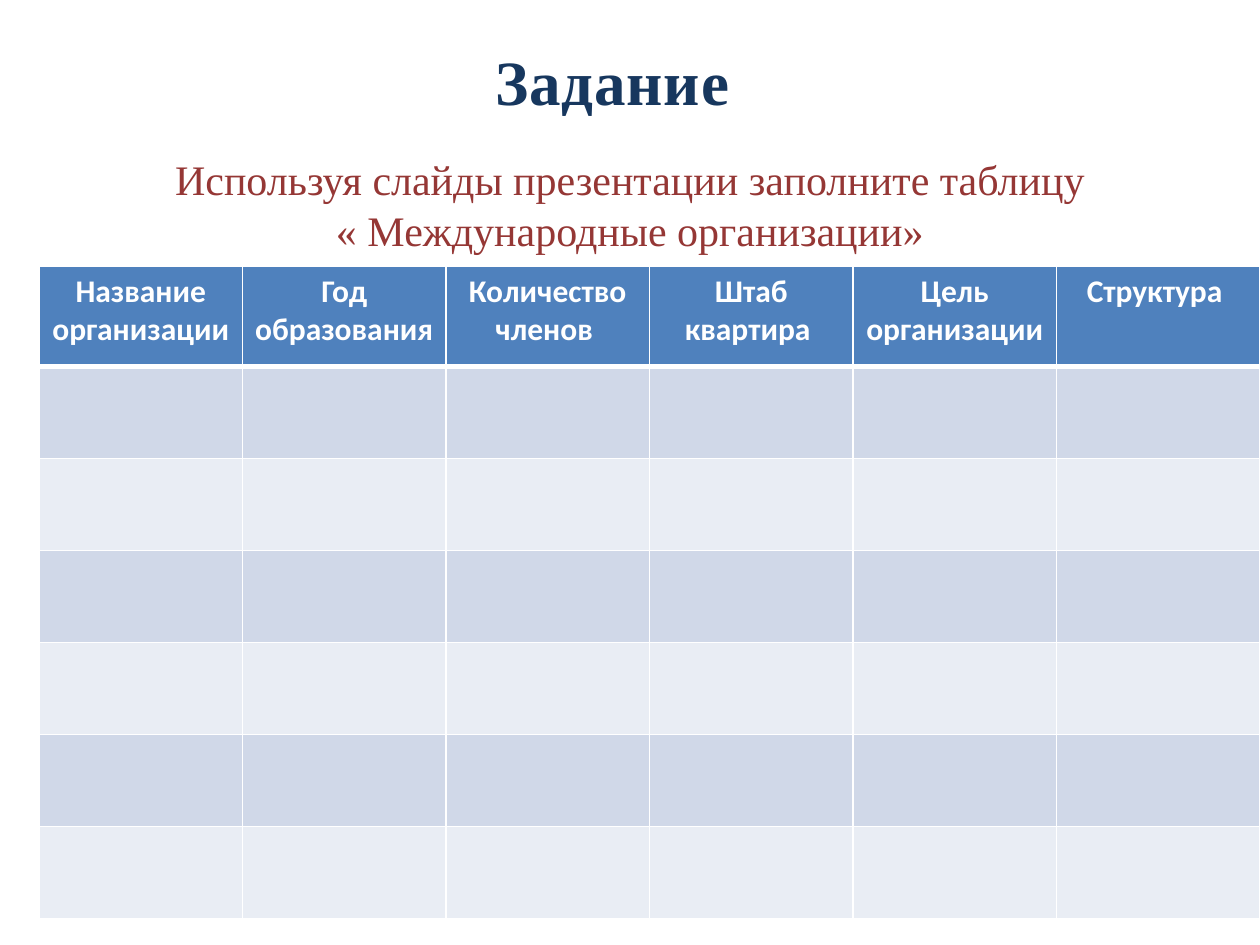
from lxml.etree import SubElement
from pptx import Presentation
from pptx.dml.color import RGBColor
from pptx.enum.text import MSO_AUTO_SIZE, PP_ALIGN
from pptx.oxml.ns import qn
from pptx.util import Inches, Pt

TITLE = "Задание"
TASK = "Используя слайды презентации заполните таблицу\n« Международные организации»"
HEADERS = [
    "Название организации",
    "Год образования",
    "Количество\nчленов ",
    "Штаб квартира ",
    "Цель организации ",
    "Структура ",
]
EMPTY_ROWS = 6
HEADER_FILL = "4F81BD"
BAND_FILLS = ["D0D8E8", "E9EDF4"]
WHITE = "FFFFFF"
LEFT, TOP, WIDTH = 0.31, 2.11, 9.69
HEADER_HEIGHT, ROW_HEIGHT = 0.8, 0.73


def color(value):
    return RGBColor.from_string(value)


def write(frame, text, font, size, ink, bold=False):
    frame.text = text
    for para in frame.paragraphs:
        para.alignment = PP_ALIGN.CENTER
        for span in para.runs:
            span.font.name = font
            span.font.size = Pt(size)
            span.font.bold = bold
            span.font.color.rgb = color(ink)


def add_text(slide, place, text, size, ink, bold=False, wrap=True):
    box = slide.shapes.add_textbox(*map(Inches, place))
    frame = box.text_frame
    write(frame, text, "Times New Roman", size, ink, bold)
    frame.word_wrap = wrap
    frame.auto_size = MSO_AUTO_SIZE.SHAPE_TO_FIT_TEXT
    return frame


def paint_cell(cell, fill, top, bottom):
    properties = cell._tc.get_or_add_tcPr()
    for side, width in (("L", 1), ("R", 1), ("T", top), ("B", bottom)):
        line = SubElement(properties, qn(f"a:ln{side}"), w=str(Pt(width)))
        solid = SubElement(line, qn("a:solidFill"))
        SubElement(solid, qn("a:srgbClr"), val=WHITE)
    cell.fill.solid()
    cell.fill.fore_color.rgb = color(fill)


def add_grid(slide):
    height = HEADER_HEIGHT + EMPTY_ROWS * ROW_HEIGHT
    place = map(Inches, (LEFT, TOP, WIDTH, height))
    table = slide.shapes.add_table(EMPTY_ROWS + 1, len(HEADERS), *place).table
    for column in table.columns:
        column.width = Inches(WIDTH / len(HEADERS))
    for index, row in enumerate(table.rows):
        row.height = Inches(ROW_HEIGHT if index else HEADER_HEIGHT)
        fill = BAND_FILLS[(index - 1) % 2] if index else HEADER_FILL
        for cell in row.cells:
            paint_cell(cell, fill, 3 if index == 1 else 1, 1 if index else 3)
    for cell, header in zip(table.rows[0].cells, HEADERS):
        write(cell.text_frame, header, "Calibri", 18, WHITE, True)


def main():
    deck = Presentation()
    deck.slide_width, deck.slide_height = Inches(10), Inches(7.5)
    slide = deck.slides.add_slide(deck.slide_layouts[6])
    title = add_text(slide, (3.82, 0.29, 2.08, 0.71), TITLE, 36, "17375E", True, False)
    title.paragraphs[0].runs[0].font._element.set("spc", "50")
    add_text(slide, (0, 1.17, 10, 0.91), TASK, 24, "953735")
    add_grid(slide)
    deck.save("out.pptx")


if __name__ == "__main__":
    main()
